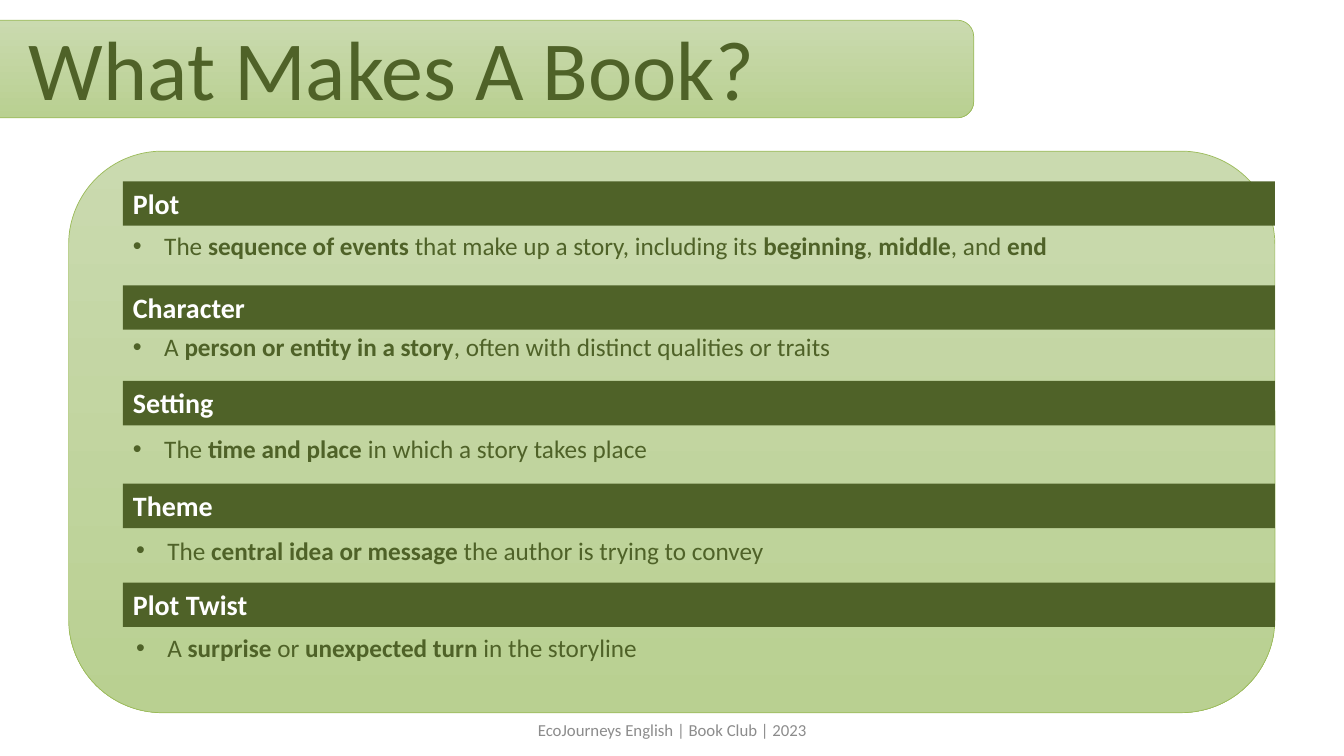
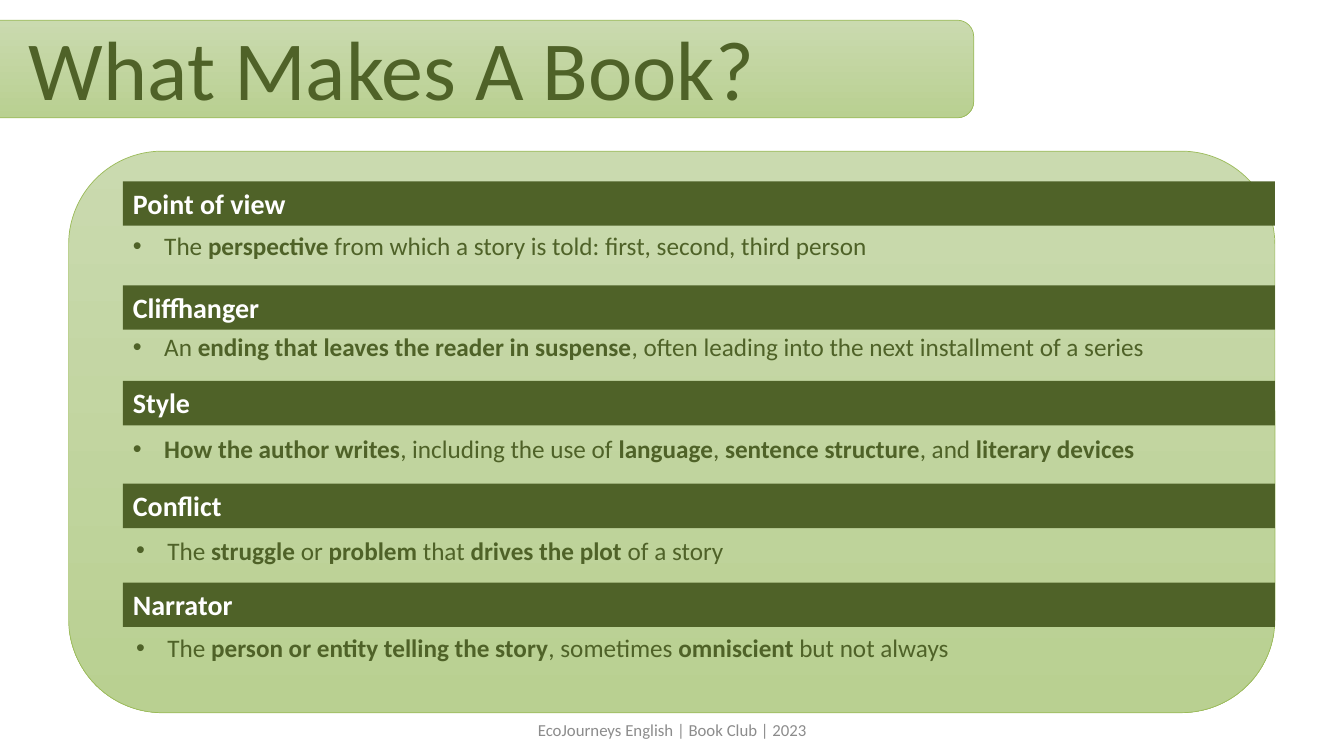
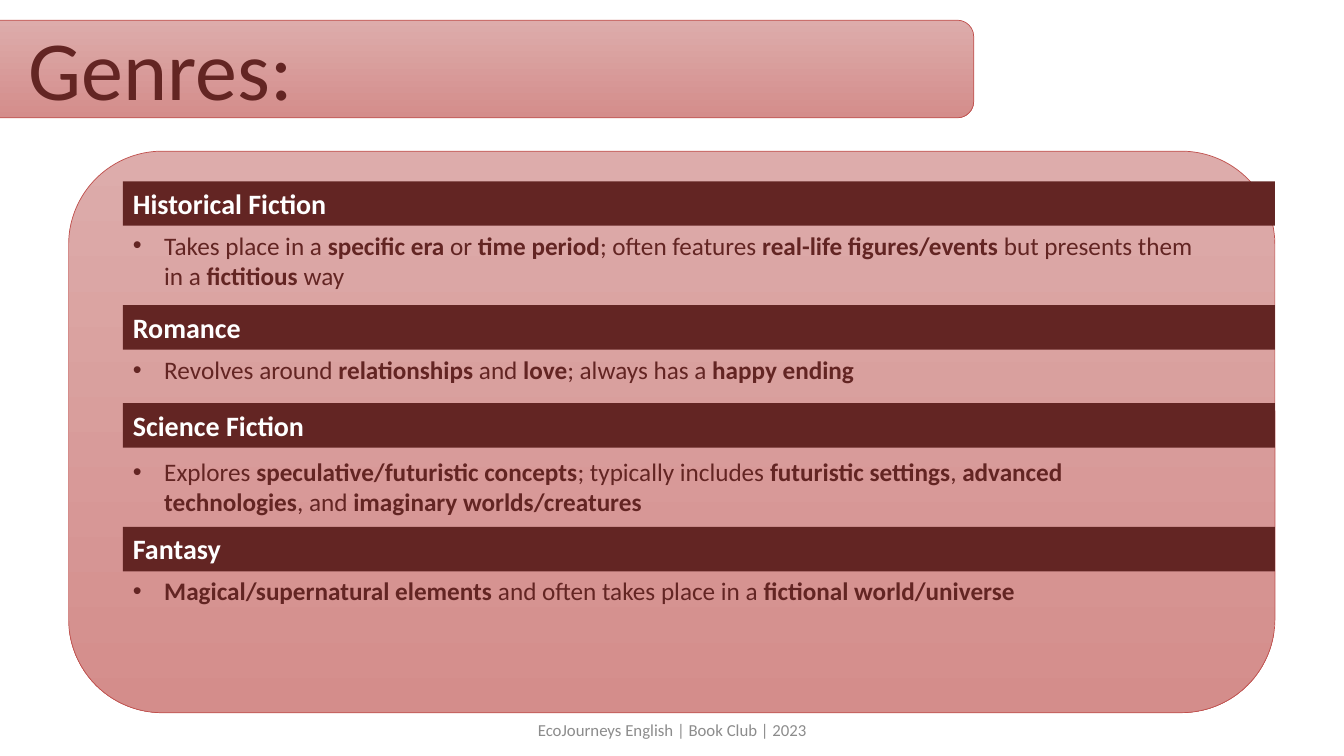
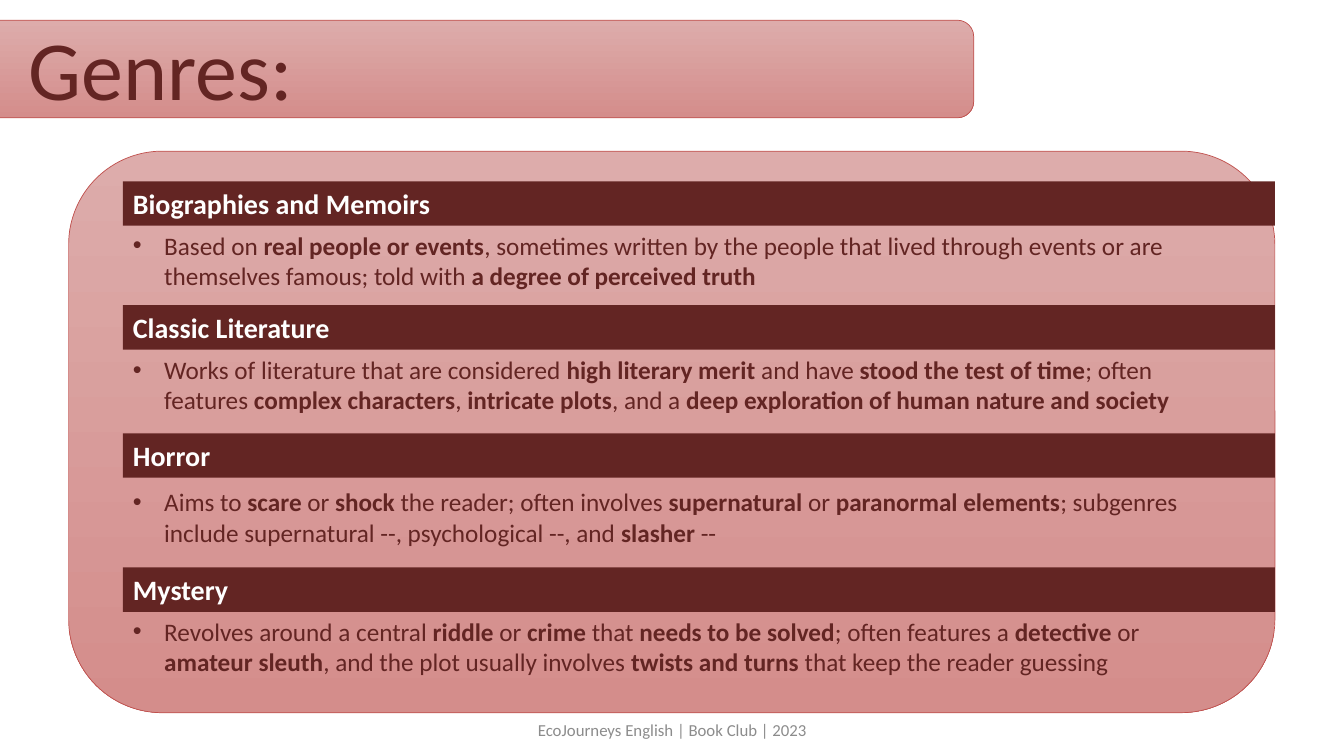
from dataclasses import dataclass

from lxml.etree import SubElement
from pptx import Presentation
from pptx.dml.color import RGBColor
from pptx.enum.shapes import MSO_SHAPE
from pptx.enum.text import MSO_ANCHOR, MSO_AUTO_SIZE, PP_ALIGN
from pptx.oxml.ns import qn
from pptx.util import Cm, Pt

FONT = "Calibri"
WHITE = "FFFFFF"
FOOTER_GREY = "8C8C8C"
FOOTER = "EcoJourneys English | Book Club | 2023"

# Boxes are left, top, width, height in centimetres.
BANNER = (-1.85, 0.51, 26.39, 2.46)
TITLE = (0.48, 0.58, 25.4, 3)
PANEL = (1.73, 3.81, 30.4, 14.15)
FOOTER_BOX = (11.23, 17.88, 11.43, 1.02)
BAR_INSET = 1.37
BAR_HEIGHT = 1.12
DEFINITION_WIDTH = 27.53
BULLET_INDENT = 0.79


@dataclass
class Theme:
    dark: str
    outline: str
    gradient: tuple


GREEN = Theme("4F6228", "9BBB59", ("CADAAF", "B9D091"))
RED = Theme("632523", "C0504D", ("DDACAB", "D48D8B"))


@dataclass
class Row:
    """Place of one term: bar top in the panel, drop to its definition."""
    top: float
    drop: float
    lines: int = 1
    shift: float = 0


ELEMENT_ROWS = [Row(0.76, 1.12), Row(3.38, 1.04), Row(5.79, 1.2),
                Row(8.38, 1.17, shift=0.08), Row(10.87, 1.14, shift=0.08)]
FICTION_ROWS = [Row(0.76, 1.1, 2), Row(3.88, 1.12), Row(6.35, 1.22, 2), Row(9.47, 1.1)]
GENRE_ROWS = [Row(0.76, 1.1, 2), Row(3.88, 1.12, 2), Row(7.11, 1.22, 2), Row(10.49, 1.1, 2)]

# Asterisks enclose bold words.
SLIDES = [
    ("What Makes A Book?", GREEN, ELEMENT_ROWS, [
        ("Plot", "The *sequence of events *that make up a story, including its "
                 "*beginning*, *middle*, and *end*"),
        ("Character", "A *person or entity in a story*, often with distinct qualities or traits"),
        ("Setting", "The *time and place *in which a story takes place"),
        ("Theme", "The *central idea or message *the author is trying to convey"),
        ("Plot Twist", "A *surprise* or *unexpected turn *in the storyline"),
    ]),
    ("What Makes A Book?", GREEN, ELEMENT_ROWS, [
        ("Point of view", "The *perspective* from which a story is told: "
                          "first, second, third person"),
        ("Cliffhanger", "An *ending that leaves the reader in suspense*, "
                        "often leading into the next installment of a series"),
        ("Style", "*How the author writes*, including the use of *language*, "
                  "*sentence structure*, and *literary devices*"),
        ("Conflict", "The *struggle* or *problem* that *drives the plot *of a story"),
        ("Narrator", "The *person or entity telling the story*, sometimes "
                     "*omniscient* but not always"),
    ]),
    ("Genres:", RED, FICTION_ROWS, [
        ("Historical Fiction", "Takes place in a *specific era *or *time period*; often features "
                               "*real-life figures/events *but presents them in a "
                               "*fictitious* way"),
        ("Romance", "Revolves around *relationships* and *love*; always has a *happy ending*"),
        ("Science Fiction", "Explores *speculative/futuristic concepts*; typically includes "
                            "*futuristic settings*, *advanced technologies*, and "
                            "*imaginary worlds/creatures*"),
        ("Fantasy", "*Magical/supernatural elements* and often takes place in a "
                    "*fictional world/universe*"),
    ]),
    ("Genres:", RED, GENRE_ROWS, [
        ("Biographies and Memoirs", "Based on *real people or events*, sometimes written by the "
                                    "people that lived through events or are themselves famous; "
                                    "told with *a degree of perceived truth*"),
        ("Classic Literature", "Works of literature that are considered *high literary merit *and "
                               "have *stood the test of time*; often features "
                               "*complex characters*, *intricate plots*, and a "
                               "*deep exploration of human nature and society*"),
        ("Horror", "Aims to *scare* or *shock* the reader; often involves *supernatural* or "
                   "*paranormal elements*; subgenres include supernatural --, "
                   "psychological --, and *slasher* --"),
        ("Mystery", "Revolves around a central *riddle* or *crime* that *needs to be solved*; "
                    "often features a *detective* or *amateur sleuth*, and the plot usually "
                    "involves *twists and turns *that keep the reader guessing"),
    ]),
]


def paint(color, hex_color):
    color.rgb = RGBColor.from_string(hex_color)


def add_run(paragraph, text, size, color, bold=False):
    run = paragraph.add_run()
    run.text = text
    run.font.name = FONT
    run.font.size = Pt(size)
    run.font.bold = bold
    paint(run.font.color, color)


def add_text_box(slide, box):
    frame = slide.shapes.add_textbox(*map(Cm, box)).text_frame
    frame.word_wrap = True
    return frame


def add_block(slide, preset, box):
    block = slide.shapes.add_shape(preset, *map(Cm, box))
    block.shadow.inherit = False
    return block


def add_gradient_block(slide, box, theme):
    block = add_block(slide, MSO_SHAPE.ROUNDED_RECTANGLE, box)
    block.fill.gradient()
    block.fill.gradient_angle = 270
    for stop, shade in zip(block.fill.gradient_stops, theme.gradient):
        paint(stop.color, shade)
    paint(block.line.color, theme.outline)
    block.line.width = Pt(0.5)


def add_title(slide, title, theme):
    add_gradient_block(slide, BANNER, theme)
    paragraph = add_text_box(slide, TITLE).paragraphs[0]
    paragraph.line_spacing = 0.9
    paragraph.space_before = Pt(10)
    add_run(paragraph, title, 60, theme.dark)


def add_footer(slide):
    frame = add_text_box(slide, FOOTER_BOX)
    frame.vertical_anchor = MSO_ANCHOR.MIDDLE
    frame.paragraphs[0].alignment = PP_ALIGN.CENTER
    add_run(frame.paragraphs[0], FOOTER, 12, FOOTER_GREY)


def add_term_bar(slide, box, term, theme):
    bar = add_block(slide, MSO_SHAPE.RECTANGLE, box)
    bar.fill.solid()
    paint(bar.fill.fore_color, theme.dark)
    bar.line.fill.background()
    frame = bar.text_frame
    frame.word_wrap = True
    frame.auto_size = MSO_AUTO_SIZE.SHAPE_TO_FIT_TEXT
    frame.vertical_anchor = MSO_ANCHOR.TOP
    frame.paragraphs[0].alignment = PP_ALIGN.LEFT
    add_run(frame.paragraphs[0], term, 20, WHITE, bold=True)


def add_bullet(paragraph):
    properties = paragraph._p.get_or_add_pPr()
    properties.set("marL", str(Cm(BULLET_INDENT)))
    properties.set("indent", str(-Cm(BULLET_INDENT)))
    SubElement(properties, qn("a:buFont")).set("typeface", "Arial")
    SubElement(properties, qn("a:buChar")).set("char", "•")


def add_definition(slide, box, definition, theme):
    frame = add_text_box(slide, box)
    frame.auto_size = MSO_AUTO_SIZE.SHAPE_TO_FIT_TEXT
    paragraph = frame.paragraphs[0]
    add_bullet(paragraph)
    for index, words in enumerate(definition.split("*")):
        if words:
            add_run(paragraph, words, 18, theme.dark, bold=index % 2 == 1)


def add_terms(slide, panel, rows, terms, theme):
    panel_left, panel_top, panel_width, _ = panel
    left = panel_left + BAR_INSET
    for row, (term, definition) in zip(rows, terms):
        top = panel_top + row.top
        add_term_bar(slide, (left, top, panel_width - BAR_INSET, BAR_HEIGHT), term, theme)
        definition_height = 0.25 + 0.77 * row.lines
        add_definition(slide, (left + row.shift, top + row.drop,
                               DEFINITION_WIDTH, definition_height), definition, theme)


def add_glossary_slide(presentation, title, theme, rows, terms):
    slide = presentation.slides.add_slide(presentation.slide_layouts[6])
    add_title(slide, title, theme)
    add_gradient_block(slide, PANEL, theme)
    add_footer(slide)
    add_terms(slide, PANEL, rows, terms, theme)


def main():
    presentation = Presentation()
    presentation.slide_width = Cm(33.87)
    presentation.slide_height = Cm(19.05)
    for content in SLIDES:
        add_glossary_slide(presentation, *content)
    presentation.save("out.pptx")


if __name__ == "__main__":
    main()
